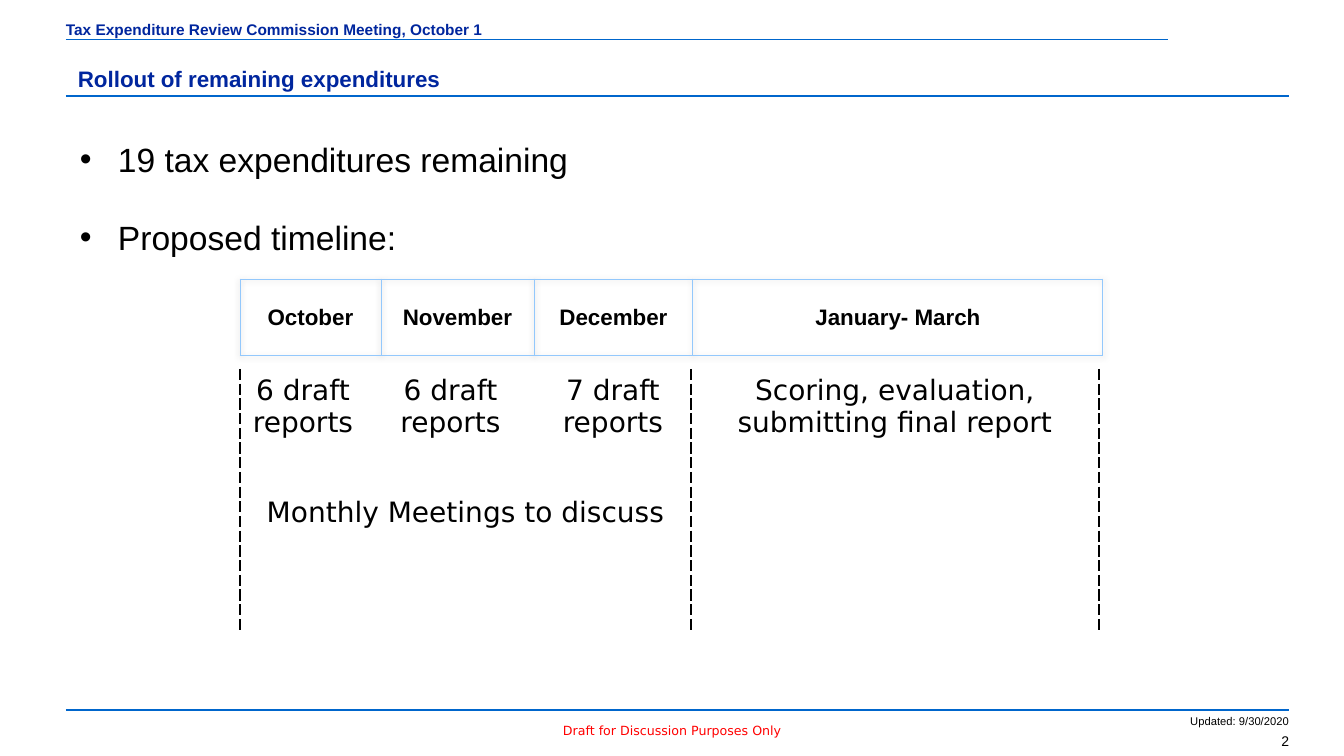
from lxml import etree
from pptx import Presentation
from pptx.dml.color import RGBColor
from pptx.enum.shapes import MSO_CONNECTOR
from pptx.enum.text import MSO_ANCHOR, PP_ALIGN
from pptx.oxml.ns import qn
from pptx.util import Pt

LEFT, CENTER, RIGHT = PP_ALIGN.LEFT, PP_ALIGN.CENTER, PP_ALIGN.RIGHT
TOP, MIDDLE = MSO_ANCHOR.TOP, MSO_ANCHOR.MIDDLE
STRAIGHT = MSO_CONNECTOR.STRAIGHT
SCALE = 914400 / 100.8
COLORS = {"black": "000000", "navy": "00269E", "blue": "0066CC",
          "sky": "93C8FC", "red": "FF0000"}
STYLES = {
    "head": {"name": "Arial", "size": Pt(11), "bold": True},
    "title": {"name": "Arial", "size": Pt(16), "bold": True},
    "body": {"name": "Arial", "size": Pt(24), "bold": False},
    "cell": {"name": "DejaVu Sans", "size": Pt(20), "bold": False},
    "draft": {"name": "DejaVu Sans", "size": Pt(9), "bold": False},
    "date": {"name": "Arial", "size": Pt(8), "bold": False},
    "page": {"name": "Arial", "size": Pt(10), "bold": False},
}


def px(value):
    return round(value * SCALE)


def node(parent, tag, **attrs):
    return etree.SubElement(parent, qn(tag), attrs)


class Deck:
    def __init__(self, width, height):
        self.show = Presentation()
        self.show.slide_width, self.show.slide_height = px(width), px(height)
        self.slide = self.show.slides.add_slide(self.show.slide_layouts[6])

    def fill(self, frame, lines, style, color="black", align=LEFT,
             bullet=False, **format):
        frame.word_wrap = True
        for i, line in enumerate(lines):
            para = frame.paragraphs[0] if i == 0 else frame.add_paragraph()
            if bullet:
                props = para._p.get_or_add_pPr()
                props.set("marL", str(px(38)))
                props.set("indent", str(px(-38)))
                node(props, "a:buFont", typeface="Arial")
                node(props, "a:buChar", char="•")
            para.alignment = align
            for name, value in format.items():
                if i or name != "space_before":
                    setattr(para, name, value)
            run = para.add_run()
            run.text = line
            for name, value in STYLES[style].items():
                setattr(run.font, name, value)
            run.font.color.rgb = RGBColor.from_string(COLORS[color])

    def text(self, box, lines, style, anchor=TOP, **format):
        frame = self.slide.shapes.add_textbox(*map(px, box)).text_frame
        frame.vertical_anchor = anchor
        self.fill(frame, lines, style, **format)

    def rule(self, left, right, y, width):
        line = self.slide.shapes.add_connector(
            STRAIGHT, px(left), px(y), px(right), px(y))
        line.line.color.rgb = RGBColor.from_string(COLORS["blue"])
        line.line.width = Pt(width)
        node(line._element.spPr, "a:effectLst")

    def table(self, left, top, cols, rows):
        table = self.slide.shapes.add_table(
            len(rows), len(cols), px(left), px(top),
            px(sum(cols)), px(sum(rows))).table
        table.first_row = table.horz_banding = False
        for col, width in zip(table.columns, cols):
            col.width = px(width)
        for row, height in zip(table.rows, rows):
            row.height = px(height)
        return table

    def shade(self, table):
        props = table._tbl.tblPr
        effects = etree.Element(qn("a:effectLst"))
        props.insert(0, effects)
        shadow = node(effects, "a:outerShdw", blurRad="50800", dist="12700",
                      dir="5400000", algn="ctr", rotWithShape="0")
        tint = node(shadow, "a:srgbClr", val=COLORS["black"])
        node(tint, "a:alpha", val="25000")

    def edge(self, cell, sides, color, width, dash="solid"):
        props = cell._tc.get_or_add_tcPr()
        for side in "LRTB":
            shown = side in sides
            line = node(props, f"a:ln{side}", w=str(Pt(width) if shown else 0))
            if shown:
                fill = node(line, "a:solidFill")
                node(fill, "a:srgbClr", val=COLORS[color])
                node(line, "a:prstDash", val=dash)
            else:
                node(line, "a:noFill")
        cell.fill.background()


def main():
    deck = Deck(1344, 756)
    for left, right, y, width in ((66, 1168, 40, 0.75), (66, 1289, 96, 1),
                                  (66, 1289, 710, 1)):
        deck.rule(left, right, y, width)
    deck.text((1187, 728, 112, 25), ["2"], "page", MIDDLE, align=RIGHT)
    deck.text((1098, 709, 201, 23), ["Updated: 9/30/2020"], "date", align=RIGHT)
    deck.text((463, 718, 418, 25), ["Draft for Discussion Purposes Only"],
              "draft", color="red", align=CENTER)
    deck.text((70, 114, 1214, 587),
              ["19 tax expenditures remaining", "Proposed timeline:"], "body",
              bullet=True, line_spacing=1.5, space_before=Pt(12))
    deck.text((68, 60, 1139, 41), ["Rollout of remaining expenditures"],
              "title", color="navy")
    deck.text((56, 15, 1110, 27),
              ["Tax Expenditure Review Commission Meeting, October 1"],
              "head", color="navy")

    months = deck.table(240, 279, (141, 153, 159, 410), (76,))
    deck.shade(months)
    names = ("October", "November", "December", "January- March")
    for cell, name in zip(months.iter_cells(), names):
        deck.edge(cell, "LRTB", "sky", 0.75)
        cell.vertical_anchor = MIDDLE
        cell.margin_left = cell.margin_right = px(5)
        cell.margin_top = cell.margin_bottom = px(4)
        deck.fill(cell.text_frame, [name], "title", align=CENTER,
                  line_spacing=1.06)

    tasks = deck.table(240, 369, (126, 169, 156, 408), (122, 139))
    tasks.cell(0, 3).merge(tasks.cell(1, 3))
    tasks.cell(1, 0).merge(tasks.cell(1, 2))
    for cell, sides in zip(tasks.iter_cells(),
                           ("L", "", "R", "LR", "LR", "", "R", "LR")):
        deck.edge(cell, sides, "black", 1, "dash")
    plans = {
        (0, 0): ["6 draft reports"],
        (0, 1): ["6 draft reports"],
        (0, 2): ["7 draft reports"],
        (0, 3): ["Scoring, evaluation,", "submitting final report"],
        (1, 0): ["Monthly Meetings to discuss"],
    }
    for place, lines in plans.items():
        deck.fill(tasks.cell(*place).text_frame, lines, "cell", align=CENTER)
    deck.show.save("out.pptx")


if __name__ == "__main__":
    main()
